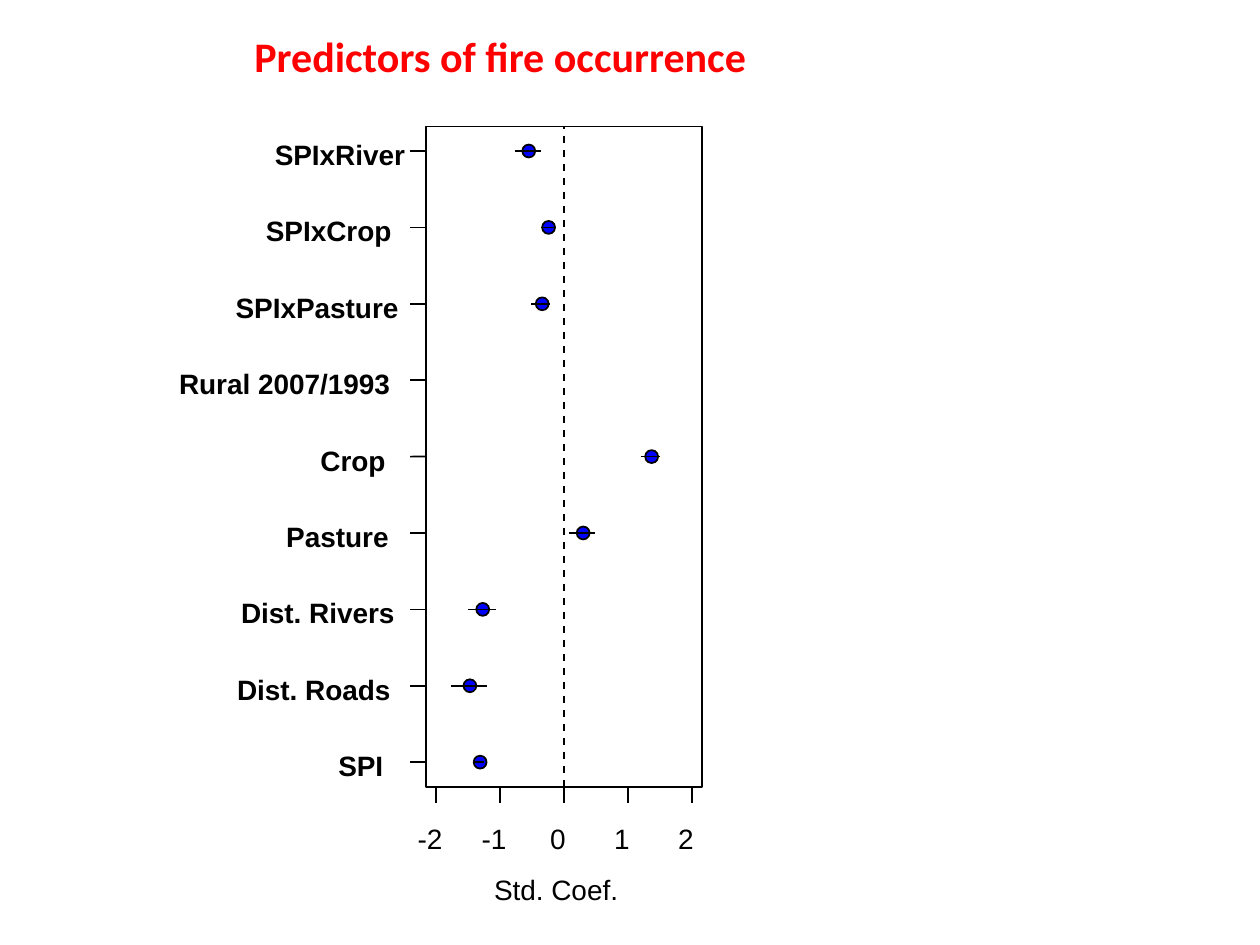
from pptx import Presentation
from pptx.dml.color import RGBColor
from pptx.enum.shapes import MSO_CONNECTOR, MSO_SHAPE
from pptx.oxml.ns import qn
from pptx.util import Cm, Pt
from lxml import etree

RED = RGBColor(0xFF, 0x00, 0x00)
BLUE = RGBColor(0x00, 0x00, 0xFF)
BLACK = RGBColor(0x00, 0x00, 0x00)
STRAIGHT = MSO_CONNECTOR.STRAIGHT
OVAL = MSO_SHAPE.OVAL
RECTANGLE = MSO_SHAPE.RECTANGLE
TOP_SITE, LEFT_SITE, BOTTOM_SITE = 0, 1, 2

PREDICTORS = [
    ("SPIxRiver", 2.67, 0.38, (-0.77, -0.55, -0.36)),
    ("SPIxCrop", 2.57, 0.66, (-0.36, -0.24, -0.14)),
    ("SPIxPasture", 3.33, 0.51, (-0.51, -0.34, -0.22)),
    ("Rural 2007/1993", 4.32, 0.66, None),
    ("Crop", 1.32, 0.81, (1.21, 1.37, 1.5)),
    ("Pasture", 2.08, 0.74, (0.08, 0.3, 0.48)),
    ("Dist. Rivers", 3.15, 0.58, (-1.5, -1.27, -1.07)),
    ("Dist. Roads", 3.12, 0.69, (-1.76, -1.47, -1.21)),
    ("SPI", 0.91, 0.86, (-1.43, -1.31, -1.25)),
]
COEFFICIENT_TICKS = range(-2, 3)
UNIT = 1.29
ROW_STEP = 1.54
TICK_LENGTH = 0.32
DOT = 0.26
DASH_COUNT = 48
DASH_LENGTH = 0.14


def add_text(slide, text, left, top, width, height, size=16, font="Arial",
             color=BLACK, bold=False, inset=True):
    box = slide.shapes.add_textbox(Cm(left), Cm(top), Cm(width), Cm(height))
    frame = box.text_frame
    frame.word_wrap = False
    if not inset:
        frame.margin_left = frame.margin_right = 0
        frame.margin_top = frame.margin_bottom = 0
    paragraph = frame.paragraphs[0]
    paragraph.text = text
    style = paragraph.runs[0].font
    style.name, style.size, style.bold = font, Pt(size), bold
    style.color.rgb = color


def add_line(slide, x1, y1, x2, y2):
    line = slide.shapes.add_connector(STRAIGHT, Cm(x1), Cm(y1), Cm(x2), Cm(y2))
    line.line.color.rgb = BLACK
    line.line.width = Pt(1)
    etree.SubElement(line._element.spPr, qn("a:effectLst"))
    return line


def add_outlined_shape(slide, kind, left, top, width, height, fill=None):
    shape = slide.shapes.add_shape(kind, Cm(left), Cm(top), Cm(width), Cm(height))
    shape.shadow.inherit = False
    if fill is None:
        shape.fill.background()
    else:
        shape.fill.solid()
        shape.fill.fore_color.rgb = fill
    shape.line.color.rgb = BLACK
    shape.line.width = Pt(1)
    return shape


def add_title(slide, left, top, width, height):
    add_text(slide, "Predictors of fire occurrence", left, top, width, height,
             size=24, font="Calibri", color=RED, bold=True)


def add_zero_line(slide, frame, x, top, height):
    bottom = top + height
    step = height / (DASH_COUNT - 0.8)
    for index in range(DASH_COUNT):
        start = bottom - index * step
        dash = add_line(slide, x, start, x, max(start - DASH_LENGTH, top))
        if index == 0:
            dash.begin_connect(frame, BOTTOM_SITE)
    dash.end_connect(frame, TOP_SITE)


def add_coefficient_plot(slide, left, top, width, height):
    bottom = top + height
    zero = left + width / 2
    middle = (len(PREDICTORS) - 1) / 2
    rows = [top + height / 2 + (index - middle) * ROW_STEP
            for index in range(len(PREDICTORS))]

    for (name, label_width, gap, estimate), y in zip(PREDICTORS, rows):
        add_text(slide, name, left - gap - label_width, y - 0.27, label_width, 0.69,
                 bold=True, inset=False)
        if estimate:
            add_outlined_shape(slide, OVAL, zero + estimate[1] * UNIT - DOT / 2,
                               y - DOT / 2, DOT, DOT, BLUE)

    frame = add_outlined_shape(slide, RECTANGLE, left, top, width, height)
    add_zero_line(slide, frame, zero, top, height)

    add_line(slide, zero - 2 * UNIT, bottom, zero + 2 * UNIT, bottom)
    for value in COEFFICIENT_TICKS:
        x = zero + value * UNIT
        tick = add_line(slide, x, bottom, x, bottom + TICK_LENGTH)
        if value == 0:
            tick.begin_connect(frame, BOTTOM_SITE)
        label_width = 0.74 if value < 0 else 0.56
        add_text(slide, str(value), x - label_width / 2, bottom + 0.71,
                 label_width, 0.74, inset=False)

    add_line(slide, left, rows[-1], left, rows[0])
    for index, y in enumerate(rows):
        tick = add_line(slide, left, y, left - TICK_LENGTH, y)
        if index == middle:
            tick.begin_connect(frame, LEFT_SITE)
        estimate = PREDICTORS[index][3]
        if estimate:
            low, _, high = estimate
            add_line(slide, zero + high * UNIT, y, zero + low * UNIT, y)

    add_text(slide, "Std. Coef.", left + 1.37, bottom + 1.73, 2.54, 0.69, inset=False)


def main():
    presentation = Presentation()
    presentation.slide_width = Cm(25.4)
    presentation.slide_height = Cm(19.05)
    slide = presentation.slides.add_slide(presentation.slide_layouts[6])
    add_title(slide, 4.88, 0.49, 10.52, 1.27)
    add_coefficient_plot(slide, 8.59, 2.55, 5.56, 13.31)
    presentation.save("out.pptx")


if __name__ == "__main__":
    main()
